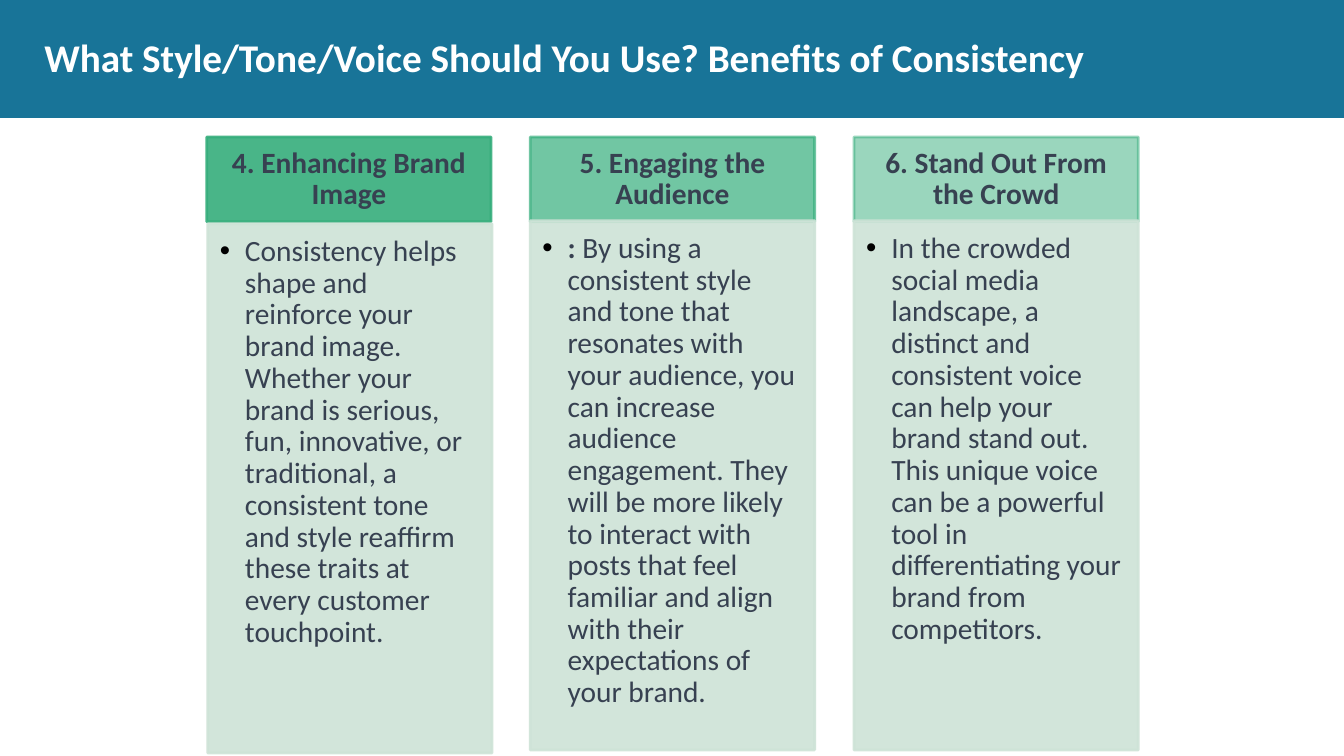
"""Build a slide on the benefits of a consistent style, tone and voice."""
import pptx
import pptx.dml.color
import pptx.enum.shapes
import pptx.enum.text
import pptx.oxml
import pptx.oxml.ns
import pptx.util
from pptx.util import Inches

RGBColor = pptx.dml.color.RGBColor
PP_ALIGN = pptx.enum.text.PP_ALIGN
MSO_ANCHOR = pptx.enum.text.MSO_ANCHOR
RECTANGLE = pptx.enum.shapes.MSO_SHAPE.RECTANGLE

BLUE = RGBColor(0x18, 0x74, 0x98)
GREEN = RGBColor(0x36, 0xAE, 0x7C)
PALE_GREEN = RGBColor(0xCE, 0xE3, 0xD7)
SLATE = RGBColor(0x37, 0x41, 0x51)
WHITE = RGBColor(0xFF, 0xFF, 0xFF)

FIRST_LEFT, COLUMN_STEP, COLUMN_WIDTH = 2.05, 3.21, 2.82
HEADING_TOP, HEADING_HEIGHT = 1.36, 0.84
BODY_HEIGHT = 5.25
HEADING_INSETS = (0.16, 0.09, 0.16, 0.09)
BODY_INSETS = (0.12, 0.12, 0.16, 0.18)

COLUMNS = [
    {
        "heading": "4. Enhancing Brand Image",
        "opacity": 90,
        "body_left": 2.06,
        "body_top": 2.22,
        "runs": [("Consistency helps shape and reinforce your brand image. "
                  "Whether your brand is serious, fun, innovative, or "
                  "traditional, a consistent tone and style reaffirm these "
                  "traits at every customer touchpoint.", False)],
    },
    {
        "heading": "5. Engaging the Audience",
        "opacity": 70,
        "runs": [(":", True),
                 (" By using a consistent style and tone that resonates with "
                  "your audience, you can increase audience engagement. They "
                  "will be more likely to interact with posts that feel "
                  "familiar and align with their expectations of your brand.",
                  False)],
    },
    {
        "heading": "6. Stand Out From the Crowd",
        "opacity": 50,
        "runs": [("In the crowded social media landscape, a distinct and "
                  "consistent voice can help your brand stand out. This "
                  "unique voice can be a powerful tool in differentiating "
                  "your brand from competitors.", False)],
    },
]


def set_attributes(target, values):
    """Set each named format value on the target."""
    for name, value in values.items():
        setattr(target, name, value)


def add_box(s, box, color, opacity=None):
    """Add a filled rectangle, with a matching outline if translucent."""
    sp = s.shapes.add_shape(RECTANGLE, *map(Inches, box))
    sp.shadow.inherit = False
    sp.fill.solid()
    sp.fill.fore_color.rgb = color
    if opacity is None:
        sp.line.fill.background()
        return sp
    sp.line.color.rgb = color
    sp.line.width = pptx.util.Pt(2)
    for clr in sp.element.spPr.iter(pptx.oxml.ns.qn("a:srgbClr")):
        alpha = pptx.oxml.parse_xml(
            f'<a:alpha {pptx.oxml.ns.nsdecls("a")} val="{opacity * 1000}"/>')
        clr.append(alpha)
    return sp


def write_text(sp, runs, insets, anchor, align, size=21, color=SLATE, spacing=0.9):
    """Write one paragraph of (text, bold) runs and return it."""
    tf = sp.text_frame
    sides = ("margin_left", "margin_top", "margin_right", "margin_bottom")
    set_attributes(tf, dict(zip(sides, map(Inches, insets))))
    set_attributes(tf, {"word_wrap": True, "vertical_anchor": anchor})
    p = tf.paragraphs[0]
    set_attributes(p, {"alignment": align, "line_spacing": spacing})
    for text, bold in runs:
        r = p.add_run()
        r.text = text
        set_attributes(r.font, {"name": "Calibri", "size": pptx.util.Pt(size),
                                "bold": bold})
        r.font.color.rgb = color
    return p


def add_bullet(p):
    """Give the paragraph a black bullet with a hanging indent."""
    pPr = p._p.get_or_add_pPr()
    indent = Inches(0.25)
    pPr.set("marL", str(indent))
    pPr.set("indent", str(-indent))
    ns = pptx.oxml.ns.nsdecls("a")
    for xml in (f'<a:buClr {ns}><a:srgbClr val="000000"/></a:buClr>',
                f'<a:buFont {ns} typeface="Arial"/>',
                f'<a:buChar {ns} char="•"/>'):
        pPr.append(pptx.oxml.parse_xml(xml))


def add_title(s, text):
    """Add the title band and its text."""
    add_box(s, (0, 0, 13.33, 1.17), BLUE)
    sp = s.shapes.add_textbox(*map(Inches, (0.44, 0.19, 12.46, 0.74)))
    write_text(sp, [(text, True)], (0, 0, 0, 0), MSO_ANCHOR.MIDDLE,
               PP_ALIGN.LEFT, size=28, color=WHITE, spacing=1.0)


def add_column(s, index, column):
    """Add one heading with its bulleted body below."""
    left = FIRST_LEFT + index * COLUMN_STEP
    sp = add_box(s, (left, HEADING_TOP, COLUMN_WIDTH, HEADING_HEIGHT),
                 GREEN, column["opacity"])
    write_text(sp, [(column["heading"], True)], HEADING_INSETS,
               MSO_ANCHOR.MIDDLE, PP_ALIGN.CENTER)
    body = (column.get("body_left", left), column.get("body_top", 2.19),
            COLUMN_WIDTH, BODY_HEIGHT)
    sp = add_box(s, body, PALE_GREEN, 90)
    p = write_text(sp, column["runs"], BODY_INSETS, MSO_ANCHOR.TOP, PP_ALIGN.LEFT)
    add_bullet(p)


def main():
    """Create the presentation and save it."""
    prs = pptx.Presentation()
    set_attributes(prs, {"slide_width": Inches(13.33), "slide_height": Inches(7.5)})
    s = prs.slides.add_slide(prs.slide_layouts[6])
    add_title(s, "What Style/Tone/Voice Should You Use? Benefits of Consistency")
    for index, column in enumerate(COLUMNS):
        add_column(s, index, column)
    prs.save("out.pptx")


if __name__ == "__main__":
    main()
